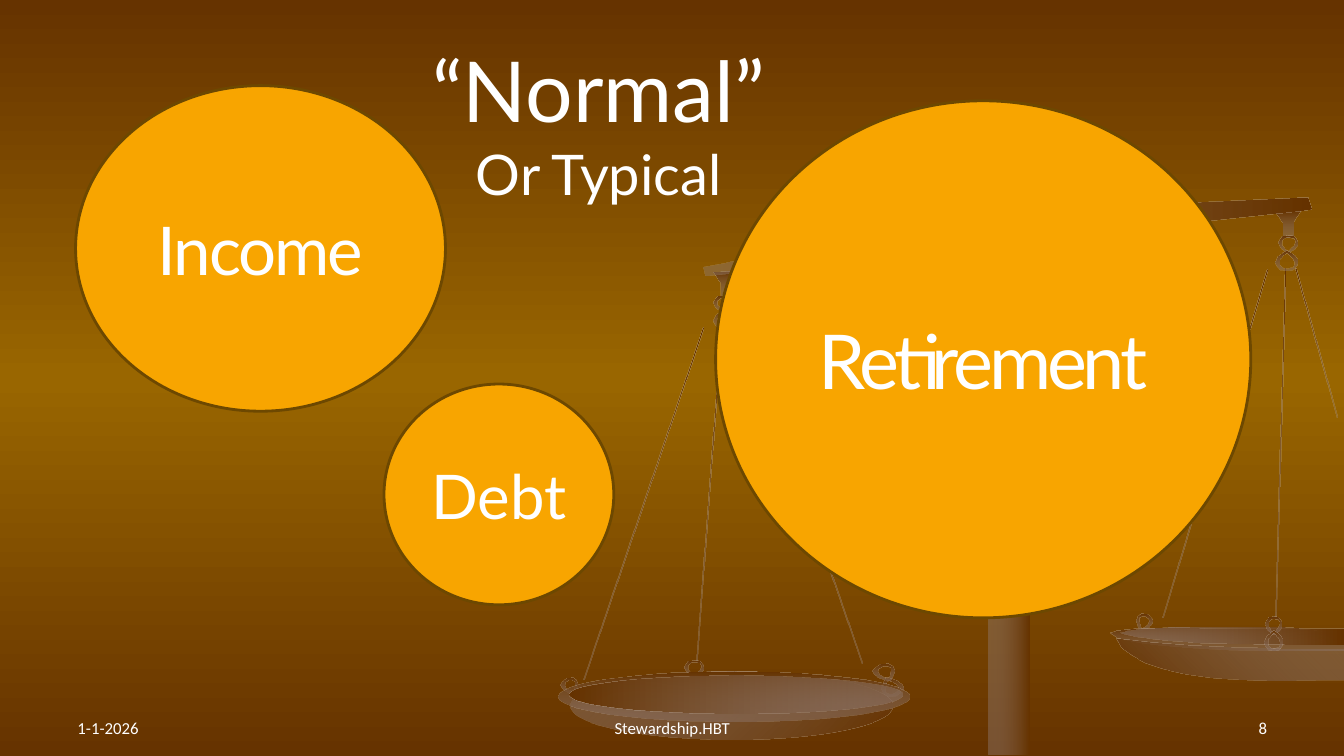
from lxml import etree
from pptx import Presentation
from pptx import util as u
from pptx.dml.color import RGBColor
from pptx.enum import shapes, text
from pptx.oxml.ns import qn

# Content; boxes are left, top, width, height in hundredths of an inch
TITLE_BOX = (417, 33, 354, 178)
TITLE = [("“Normal”", 60), ("Or Typical", 40)]
CIRCLES = [  # label, box, size, letter spacing
    ("Retirement", (710, 100, 531, 513), 54, -3),
    ("Income", (75, 85, 367, 323), 48, -1.5),
    ("Debt", (381, 381, 228, 219), 44, 0),
]
FOOTERS = [
    ("1-1-2026", (67, 687, 311, 50), text.PP_ALIGN.LEFT),
    ("Stewardship.HBT", (456, 687, 422, 50), text.PP_ALIGN.CENTER),
    ("8", (956, 687, 311, 50), text.PP_ALIGN.RIGHT),
]
WHITE, ORANGE, EDGE = "FFFFFF", "F8A500", "6D4800"
DARK, LIGHT, GLOW = "663300", "937F79", "996600"
LIGHT_ALPHA = 40

# Gradients: first colour, last colour, clockwise angle
DOWN, UPRIGHT = (DARK, LIGHT, 90), (DARK, LIGHT, 315)
ACROSS, ACROSS_DARK = (LIGHT, DARK, 0), (DARK, LIGHT, 0)
DIAGONAL = (LIGHT, DARK, 45)

# Chain links and hook as contours on a 0..100 grid
LINK = [
    [(50, 100), (80, 80), (100, 55), (97, 28), (78, 5), (48, 0), (22, 5),
     (3, 30), (0, 45), (12, 70), (35, 90)],
    [(55, 12), (78, 18), (85, 30), (85, 42), (78, 58), (60, 78), (50, 88),
     (35, 75), (20, 55), (20, 30), (35, 15)],
]
CORNER_LINK = [
    [(80, 100), (90, 70), (100, 42), (90, 18), (68, 0), (35, 5), (10, 28),
     (0, 45), (10, 63), (30, 82), (58, 95)],
    [(48, 18), (68, 18), (82, 25), (82, 45), (75, 75), (67, 84), (48, 75),
     (33, 65), (24, 45), (28, 30)],
]
HOOK = [[(100, 0), (0, 6), (29, 46), (29, 100), (71, 100), (71, 42)]]
RECT, OVAL = shapes.MSO_SHAPE.RECTANGLE, shapes.MSO_SHAPE.OVAL
ROUND = shapes.MSO_SHAPE.ROUNDED_RECTANGLE
PAGE = (0, 0, 100, 100)  # contours already in slide units

FOOT = [[(929, 528), (965, 531), (986, 531), (1009, 530), (1037, 528),
         (1069, 524), (1072, 544), (1043, 548), (1023, 551), (1001, 552),
         (977, 552), (953, 551), (928, 547)]]
RIGHT_RIM = [[(1277, 624), (1195, 624), (1166, 623), (1127, 624), (1108, 626),
              (1102, 628), (1109, 633), (1136, 638), (1170, 641), (1219, 644),
              (1277, 645), (1333, 645), (1333, 626), (1306, 626)]]
RIGHT_BOWL = [[(1108, 633), (1113, 642), (1123, 649), (1136, 657), (1154, 663),
               (1176, 668), (1204, 672), (1237, 674), (1276, 675), (1333, 674),
               (1333, 643), (1270, 643), (1225, 642), (1181, 640), (1143, 637)]]
RIGHT_DISH = [[(1275, 623), (1158, 623), (1134, 624), (1119, 626), (1112, 628),
               (1125, 631), (1151, 634), (1191, 637), (1244, 638), (1304, 639),
               (1333, 639), (1333, 624), (1291, 624)]]
BEAM = [[(1297, 196), (1301, 208), (700, 273), (698, 264), (983, 212),
         (1012, 209)]]
POINTER = [[(1055, 539), (1000, 280), (1000, 276), (997, 268), (1013, 265),
            (1015, 274), (1017, 277)]]
CAP = [[(1002, 247), (1018, 248), (1029, 253), (1036, 260), (1038, 271),
        (965, 271), (968, 260), (976, 253), (987, 248)]]

# Scales, back to front: preset or contours, box, gradient, then rotation
# for a preset or mirroring ("h", "v") for contours
SCALES = [
    (RECT, (979, 237, 46, 18), DOWN, 0),
    (OVAL, (995, 206, 11, 8), DOWN, 0),
    (RECT, (1205, 260, 1, 360), DOWN, 16.6),
    (CORNER_LINK, (1128, 609, 15, 17), DOWN, "h"),
    (RECT, (1270, 266, 1, 347), DOWN, 1.5),
    (RECT, (1306, 264, 1, 153), DOWN, 344.6),
    (RECT, (797, 315, 1, 353), DOWN, 341),
    (RECT, (638, 316, 1, 368), DOWN, 18.6),
    (RECT, (703, 325, 1, 331), DOWN, 4.2),
    (FOOT, PAGE, DOWN, ""),
    (RIGHT_RIM, PAGE, DOWN, ""),
    (RIGHT_BOWL, PAGE, UPRIGHT, ""),
    (RIGHT_DISH, PAGE, ACROSS, ""),
    (HOOK, (708, 268, 24, 27), DOWN, ""),
    (LINK, (708, 293, 21, 17), DOWN, ""),
    (LINK, (708, 307, 21, 19), DOWN, "v"),
    (HOOK, (1266, 209, 24, 27), DOWN, ""),
    (LINK, (1268, 234, 19, 17), DOWN, ""),
    (LINK, (1266, 249, 21, 19), DOWN, "v"),
    (LINK, (1256, 612, 15, 17), DOWN, ""),
    (BEAM, PAGE, ACROSS, ""),
    (LINK, (679, 655, 19, 16), DOWN, ""),
    (CORNER_LINK, (875, 672, 21, 19), DOWN, "hv"),
    (CORNER_LINK, (556, 672, 17, 16), DOWN, ""),
    (OVAL, (566, 666, 319, 68), DIAGONAL, 0),
    (OVAL, (554, 666, 348, 50), DOWN, 0),
    (OVAL, (565, 670, 330, 38), ACROSS_DARK, 0),
    (CORNER_LINK, (866, 658, 21, 17), DOWN, ""),
    (LINK, (1255, 626, 17, 19), DOWN, "v"),
    (RECT, (981, 308, 40, 441), ACROSS, 0),
    (RECT, (993, 268, 18, 42), DOWN, 0),
    (ROUND, (977, 303, 47, 9), DOWN, 0),
    (POINTER, PAGE, DIAGONAL, ""),
    (CAP, PAGE, ACROSS, ""),
]


def rgb(value):
    return RGBColor.from_string(value)


def place(box):
    return [u.Cm(v * 0.0254) for v in box]


def set_gradient(fill, first, last, angle):
    fill.gradient()
    fill.gradient_angle = 360 - angle
    for stop, color in zip(fill.gradient_stops, (first, last)):
        stop.color.rgb = rgb(color)


def add_contours(contours, box, mirror):
    left, top, width, height = box

    def spot(x, y):
        x = 100 - x if "h" in mirror else x
        y = 100 - y if "v" in mirror else y
        return left * 10 + x * width / 10, top * 10 + y * height / 10

    outlines = [[spot(*point) for point in contour] for contour in contours]
    builder = s.shapes.build_freeform(*outlines[0][0], scale=u.Cm(2.54) / 1000)
    builder.add_line_segments(outlines[0][1:], close=True)
    for outline in outlines[1:]:
        builder.move_to(*outline[0])
        builder.add_line_segments(outline[1:], close=True)
    return builder.convert_to_shape()


def style(p, size, font, align):
    p.alignment = align
    p.font.size = u.Pt(size)
    p.font.name = font
    p.font.color.rgb = rgb(WHITE)


prs = Presentation()
prs.slide_width, prs.slide_height = u.Cm(33.87), u.Cm(19.05)
s = prs.slides.add_slide(prs.slide_layouts[5])

# Background, with a bright band in the middle
fill = s.background.fill
set_gradient(fill, DARK, DARK, 90)
stops = s.background._cSld.find(".//" + qn("a:gsLst"))
middle = etree.Element(qn("a:gs"), pos="50000")
etree.SubElement(middle, qn("a:srgbClr"), val=GLOW)
stops.insert(1, middle)

# Scales
for kind, box, gradient, turn in SCALES:
    if isinstance(kind, list):
        sp = add_contours(kind, box, turn)
    else:
        sp = s.shapes.add_shape(kind, *place(box))
        sp.rotation = turn
    set_gradient(sp.fill, *gradient)
    for color in sp._element.spPr.iter(qn("a:srgbClr")):
        if color.get("val") == LIGHT:
            etree.SubElement(color, qn("a:alpha"), val=str(LIGHT_ALPHA * 1000))
    sp.line.fill.background()
    sp.shadow.inherit = False

# Footers
for label, box, align in FOOTERS:
    tf = s.shapes.add_textbox(*place(box)).text_frame
    tf.word_wrap = True
    tf.vertical_anchor = text.MSO_ANCHOR.BOTTOM
    tf.text = label
    style(tf.paragraphs[0], 12, "Calibri", align)

# Circles
for label, box, size, spacing in CIRCLES:
    sp = s.shapes.add_shape(OVAL, *place(box))
    sp.shadow.inherit = False
    sp.fill.solid()
    sp.fill.fore_color.rgb = rgb(ORANGE)
    sp.line.color.rgb = rgb(EDGE)
    sp.line.width = u.Pt(2)
    tf = sp.text_frame
    tf.vertical_anchor = text.MSO_ANCHOR.MIDDLE
    p = tf.paragraphs[0]
    r = p.add_run()
    r.text = label
    r.font.color.rgb = rgb(WHITE)
    if spacing:
        r._r.get_or_add_rPr().set("spc", str(int(spacing * 100)))
    style(p, size, "Lato", text.PP_ALIGN.CENTER)

# Title
title = s.shapes.title
title.left, title.top, title.width, title.height = place(TITLE_BOX)
tf = title.text_frame
tf.word_wrap = False
tf.auto_size = text.MSO_AUTO_SIZE.SHAPE_TO_FIT_TEXT
tf.vertical_anchor = text.MSO_ANCHOR.TOP
tf.text = "\n".join(line for line, size in TITLE)
for p, (line, size) in zip(tf.paragraphs, TITLE):
    style(p, size, "Lato", text.PP_ALIGN.CENTER)

prs.save("out.pptx")
